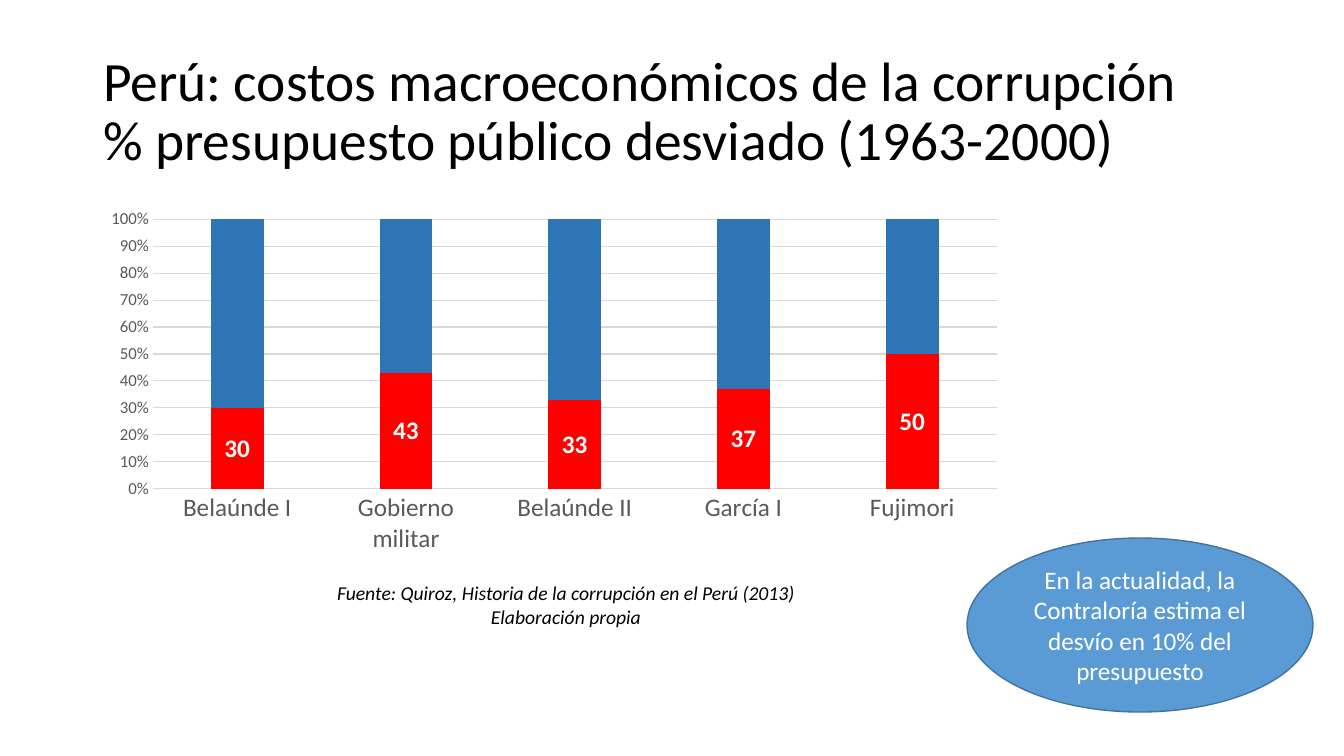
from pptx import Presentation
from pptx.chart.data import CategoryChartData
from pptx.dml.color import RGBColor
from pptx.enum.chart import XL_CHART_TYPE, XL_LABEL_POSITION, XL_TICK_MARK
from pptx.enum.shapes import MSO_SHAPE
from pptx.enum.text import MSO_ANCHOR, MSO_AUTO_SIZE, PP_ALIGN
from pptx.util import Pt

STACKED_100 = XL_CHART_TYPE.COLUMN_STACKED_100
LABEL_CENTER = XL_LABEL_POSITION.CENTER
NO_TICK = XL_TICK_MARK.NONE
ELLIPSE = MSO_SHAPE.OVAL
MIDDLE, TOP = MSO_ANCHOR.MIDDLE, MSO_ANCHOR.TOP
NO_FIT = MSO_AUTO_SIZE.NONE
LEFT, CENTER = PP_ALIGN.LEFT, PP_ALIGN.CENTER

TITLE = ("Perú: costos macroeconómicos de la corrupción\v"
         "% presupuesto público desviado (1963-2000)")
GOVERNMENTS = ["Belaúnde I", "Gobierno militar", "Belaúnde II", "García I", "Fujimori"]
DIVERTED = [30, 43, 33, 37, 50]
SERIES = [
    ("Series 1", DIVERTED, "FF0000"),
    ("Series 2", [100 - v for v in DIVERTED], "2E75B6"),
]
SOURCE = "Fuente: Quiroz, Historia de la corrupción en el Perú (2013)\nElaboración propia"
CALLOUT = "En la actualidad, la Contraloría estima el desvío en 10% del presupuesto"

FONT = "Calibri"
BLACK, WHITE, GRAY, RULE = "000000", "FFFFFF", "595959", "D9D9D9"

SLIDE_SIZE = (1344, 756)
TITLE_BOX = (93, 40, 1159, 146)
CHART_BOX = (93, 202, 922, 359)
SOURCE_BOX = (317, 576, 498, 57)
CALLOUT_BOX = (967, 538, 346, 174)
EMU_PER_PX = 914400 / 100.8


def emu(box):
    return [round(v * EMU_PER_PX) for v in box]


def rgb(value):
    return RGBColor.from_string(value)


def set_font(font, size, color, bold=False, italic=False):
    font.name, font.size, font.bold, font.italic = FONT, Pt(size), bold, italic
    font.color.rgb = rgb(color)


def set_line(line, color, width):
    line.color.rgb = rgb(color)
    line.width = Pt(width)


def write(sp, text, size, color, align, anchor, italic=False):
    tf = sp.text_frame
    tf.text = text
    tf.word_wrap = True
    tf.auto_size = NO_FIT
    tf.vertical_anchor = anchor
    for p in tf.paragraphs:
        p.alignment = align
        for r in p.runs:
            set_font(r.font, size, color, italic=italic)


def add_title(s):
    sp = s.shapes.title
    sp.left, sp.top, sp.width, sp.height = emu(TITLE_BOX)
    write(sp, TITLE, 39.6, BLACK, LEFT, MIDDLE)
    sp.text_frame.paragraphs[0].line_spacing = 0.9
    sp.text_frame.paragraphs[0].space_before = Pt(0)


def add_budget_chart(s):
    data = CategoryChartData()
    data.categories = GOVERNMENTS
    for name, values, _ in SERIES:
        data.add_series(name, values)
    chart = s.shapes.add_chart(STACKED_100, *emu(CHART_BOX), data).chart
    set_font(chart.font, 10, BLACK)
    chart.has_title = False
    chart.has_legend = False

    plot = chart.plots[0]
    plot.gap_width, plot.overlap = 219, 100
    plot.vary_by_categories = False
    for series, (_, _, color) in zip(plot.series, SERIES):
        series.format.fill.solid()
        series.format.fill.fore_color.rgb = rgb(color)
        series.invert_if_negative = False
    labels = plot.series[0].data_labels
    labels.show_value = True
    labels.position = LABEL_CENTER
    set_font(labels.font, 18, WHITE, bold=True)

    for axis, size in ((chart.category_axis, 18), (chart.value_axis, 12)):
        axis.major_tick_mark = axis.minor_tick_mark = NO_TICK
        set_font(axis.tick_labels.font, size, GRAY)
    set_line(chart.category_axis.format.line, RULE, 0.75)
    value_axis = chart.value_axis
    value_axis.format.line.fill.background()
    value_axis.has_major_gridlines = True
    set_line(value_axis.major_gridlines.format.line, RULE, 0.75)
    value_axis.tick_labels.number_format = "0%"
    value_axis.tick_labels.number_format_is_linked = False


def add_source(s):
    sp = s.shapes.add_textbox(*emu(SOURCE_BOX))
    write(sp, SOURCE, 14, BLACK, CENTER, TOP, italic=True)


def add_callout(s):
    sp = s.shapes.add_shape(ELLIPSE, *emu(CALLOUT_BOX))
    sp.shadow.inherit = False
    sp.fill.solid()
    sp.fill.fore_color.rgb = rgb("5B9BD5")
    set_line(sp.line, "43739E", 1)
    write(sp, CALLOUT, 18, WHITE, CENTER, MIDDLE)


def main():
    prs = Presentation()
    prs.slide_width, prs.slide_height = emu(SLIDE_SIZE)
    s = prs.slides.add_slide(prs.slide_layouts[5])
    add_title(s)
    add_budget_chart(s)
    add_source(s)
    add_callout(s)
    prs.save("out.pptx")


if __name__ == "__main__":
    main()
